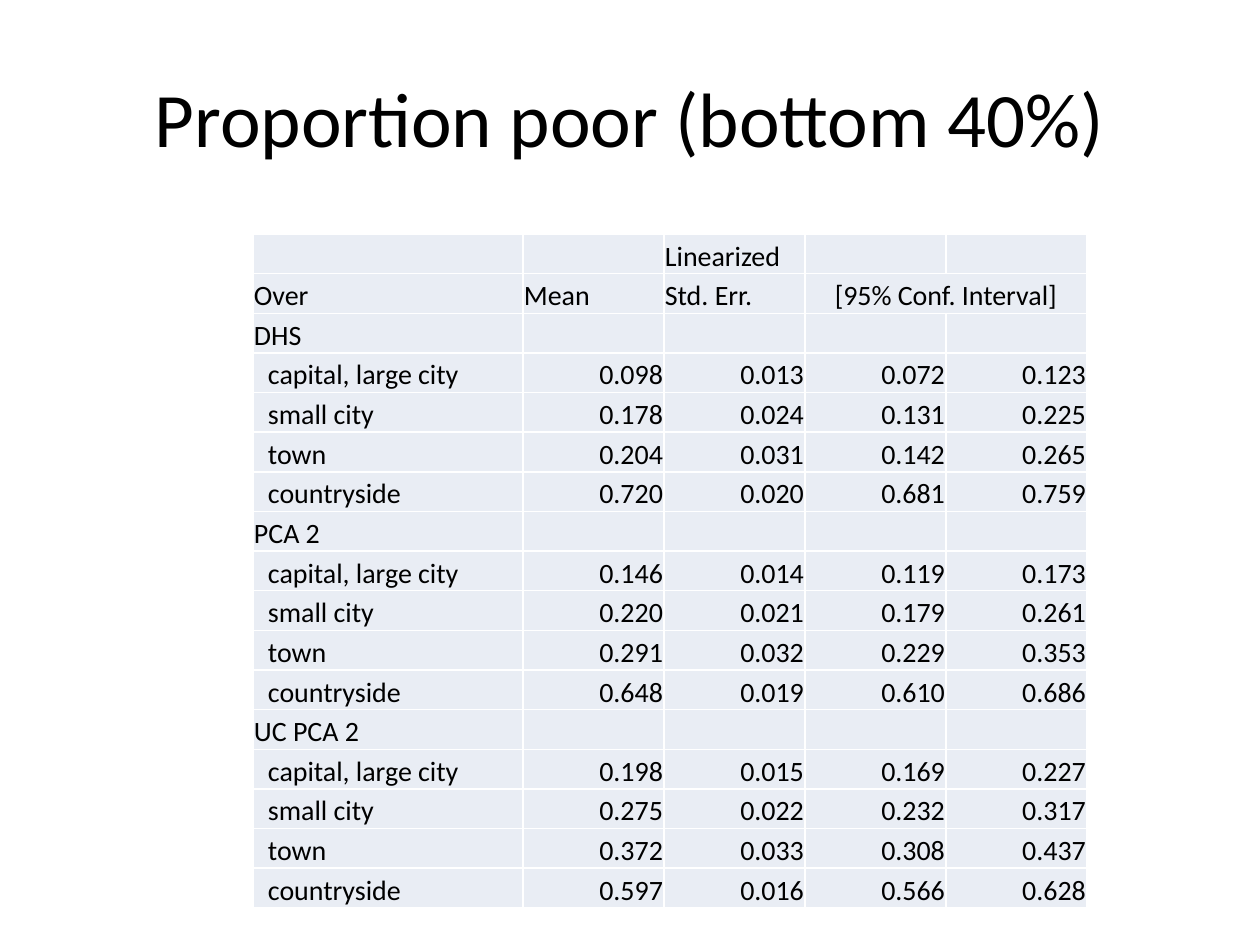
"""Build the slide comparing the proportion of poor households by area and wealth index."""
from dataclasses import dataclass

from lxml.etree import SubElement
from pptx import Presentation
from pptx.dml.color import RGBColor as RGB
from pptx.enum.text import MSO_ANCHOR as Anchor, PP_ALIGN as Align
from pptx.oxml.ns import qn
from pptx.util import Emu, Pt


@dataclass(frozen=True)
class Theme:
    font: str = "Calibri"
    title_size: Pt = Pt(44)
    table_size: Pt = Pt(16)
    rule_width: Pt = Pt(1)
    ink: RGB = RGB(0, 0, 0)
    band: RGB = RGB(0xE9, 0xED, 0xF4)
    rule: RGB = RGB(0xFF, 0xFF, 0xFF)


THEME = Theme()
PX_PER_INCH = 126
AREAS = ["capital, large city", "small city", "town", "countryside"]
ESTIMATES = {
    "DHS": [
        ["0.098", "0.013", "0.072", "0.123"],
        ["0.178", "0.024", "0.131", "0.225"],
        ["0.204", "0.031", "0.142", "0.265"],
        ["0.720", "0.020", "0.681", "0.759"],
    ],
    "PCA 2": [
        ["0.146", "0.014", "0.119", "0.173"],
        ["0.220", "0.021", "0.179", "0.261"],
        ["0.291", "0.032", "0.229", "0.353"],
        ["0.648", "0.019", "0.610", "0.686"],
    ],
    "UC PCA 2": [
        ["0.198", "0.015", "0.169", "0.227"],
        ["0.275", "0.022", "0.232", "0.317"],
        ["0.372", "0.033", "0.308", "0.437"],
        ["0.597", "0.016", "0.566", "0.628"],
    ],
}


def px(length):
    return Emu(round(length * 914400 / PX_PER_INCH))


def style_paragraph(paragraph, size, align):
    paragraph.alignment = align
    paragraph.font.name = THEME.font
    paragraph.font.size = size
    paragraph.font.color.rgb = THEME.ink


deck = Presentation()
deck.slide_width, deck.slide_height = px(1260), px(945)
slide = deck.slides.add_slide(deck.slide_layouts[5])

title = slide.shapes.title
title.left, title.top, title.width, title.height = px(63), px(38), px(1134), px(157)
title.text_frame.text = "Proportion poor (bottom 40%)"
title.text_frame.vertical_anchor = Anchor.MIDDLE
style_paragraph(title.text_frame.paragraphs[0], THEME.title_size, Align.CENTER)

rows = [
    ["", "", "Linearized", "", ""],
    ["Over", "Mean", "Std. Err.", "[95% Conf. Interval]", ""],
]
for survey, estimates in ESTIMATES.items():
    rows.append([survey, "", "", "", ""])
    rows += [[area, *values] for area, values in zip(AREAS, estimates)]

column_widths = [270, 141, 141, 141, 141]
table_height = 674
table = slide.shapes.add_table(
    len(rows), len(column_widths), px(253), px(234), px(sum(column_widths)), px(table_height)
).table
table.first_row = table.horz_banding = False
for column, width in zip(table.columns, column_widths):
    column.width = px(width)
for row in table.rows:
    row.height = px(table_height / len(rows))

interval_heading = table.cell(1, 3)
interval_heading.merge(table.cell(1, 4))

for r, row in enumerate(rows):
    for c, text in enumerate(row):
        cell = table.cell(r, c)
        cell.text = text
        cell.vertical_anchor = Anchor.BOTTOM
        cell.margin_left = px(15 if text in AREAS else 1)
        cell.margin_right = cell.margin_top = px(1)
        cell.margin_bottom = px(0)
        align = Align.RIGHT if r > 1 and c > 0 else Align.LEFT
        style_paragraph(cell.text_frame.paragraphs[0], THEME.table_size, align)
        properties = cell._tc.get_or_add_tcPr()
        for side in ("a:lnL", "a:lnR", "a:lnT", "a:lnB"):
            border = SubElement(properties, qn(side), w=str(THEME.rule_width))
            border_fill = SubElement(border, qn("a:solidFill"))
            SubElement(border_fill, qn("a:srgbClr"), val=str(THEME.rule))
        cell.fill.solid()
        cell.fill.fore_color.rgb = THEME.band

interval_heading.text_frame.paragraphs[0].alignment = Align.CENTER

deck.save("out.pptx")
